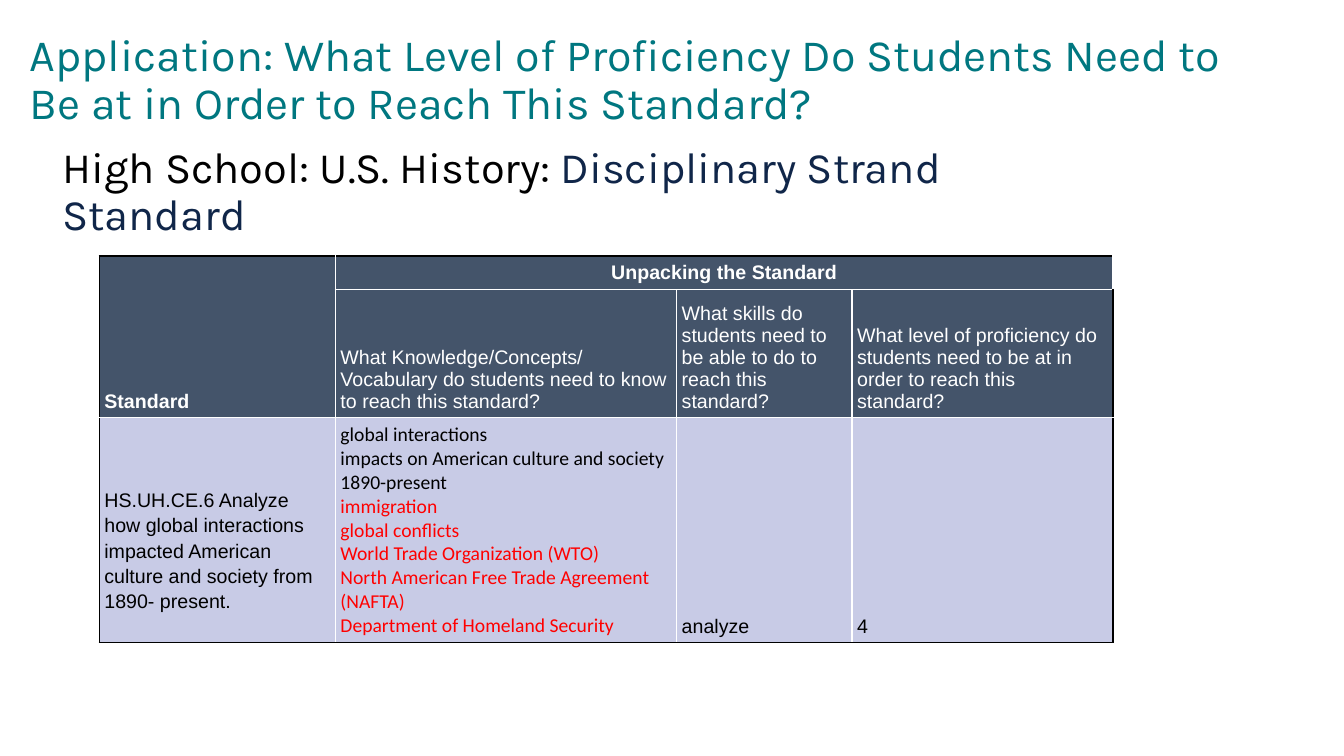
"""Build a slide that unpacks a U.S. History standard in a table."""
import pptx
import pptx.util
import pptx.dml.color
import pptx.enum.text
import pptx.oxml.ns
import lxml.etree

Cm = pptx.util.Cm
Pt = pptx.util.Pt
ALIGN = pptx.enum.text.PP_ALIGN
ANCHOR = pptx.enum.text.MSO_ANCHOR
HUES = {
    "teal": "007780", "navy": "102649", "black": "000000", "white": "FFFFFF",
    "slate": "44546A", "lilac": "C8CBE6", "red": "FF0000",
}


def tint(name):
    return pptx.dml.color.RGBColor.from_string(HUES[name])


def write(para, text, font="Arial", size=14, hue="black", bold=False,
          align=ALIGN.LEFT, lead=1.0):
    para.alignment = align
    para.line_spacing = lead
    run = para.add_run()
    run.text = text
    run.font.name = font
    run.font.size = Pt(size)
    run.font.bold = bold
    run.font.color.rgb = tint(hue)


class Board:
    def __init__(self, deck):
        self.slide = deck.slides.add_slide(deck.slide_layouts[6])
        self.font = "Karla"
        self.lead = 0.9
        self.inset = Cm(0.13)

    def label(self, place, parts, size):
        frame = self.slide.shapes.add_textbox(*map(Cm, place)).text_frame
        frame.word_wrap = True
        for text, hue in parts:
            write(frame.paragraphs[0], text, font=self.font, size=size,
                  hue=hue, lead=self.lead)

    def grid(self, left, top, widths, heights):
        frame = self.slide.shapes.add_table(
            len(heights), len(widths), Cm(left), Cm(top),
            Cm(sum(widths)), Cm(sum(heights)))
        table = frame.table
        table.first_row = table.horz_banding = False
        for col, width in zip(table.columns, widths):
            col.width = Cm(width)
        for row, height in zip(table.rows, heights):
            row.height = Cm(height)
        return table

    def border(self, cell, sides):
        props = cell._tc.get_or_add_tcPr()
        for side, hue in sides.items():
            line = lxml.etree.SubElement(
                props, pptx.oxml.ns.qn("a:ln" + side), w=str(Pt(1)))
            fill = lxml.etree.SubElement(line, pptx.oxml.ns.qn("a:solidFill"))
            lxml.etree.SubElement(
                fill, pptx.oxml.ns.qn("a:srgbClr"), val=HUES[hue])

    def paint(self, table):
        last_row, last_col = len(table.rows) - 1, len(table.columns) - 1
        for r in range(last_row + 1):
            for c in range(last_col + 1):
                cell = table.cell(r, c)
                edges = {"L": c == 0, "R": c == last_col,
                         "T": r == 0, "B": r == last_row}
                self.border(cell, {side: "black" if outer else "white"
                                   for side, outer in edges.items()})
                cell.fill.solid()
                cell.fill.fore_color.rgb = tint(
                    "lilac" if r == last_row else "slate")

    def entry(self, cell, lines, anchor=ANCHOR.BOTTOM, foot=None, **style):
        cell.vertical_anchor = anchor
        cell.margin_left = cell.margin_right = cell.margin_top = self.inset
        cell.margin_bottom = Cm(foot) if foot else self.inset
        frame = cell.text_frame
        for i, (text, hue) in enumerate(lines):
            para = frame.add_paragraph() if i else frame.paragraphs[0]
            write(para, text, hue=hue, **style)


def main():
    deck = pptx.Presentation()
    deck.slide_width, deck.slide_height = Cm(33.87), Cm(19.05)
    board = Board(deck)
    board.label((0.5, 0.7, 32.05, 3.66), [
        ("Application: What Level of Proficiency Do Students Need to "
         "Be at in Order to Reach This Standard?", "teal")], 32)
    board.label((1.32, 3.56, 25.53, 13), [
        ("High School: U.S. History: ", "black"),
        ("Disciplinary Strand Standard", "navy")], 31)

    table = board.grid(2.5, 6.45, (5.95, 8.6, 4.42, 6.58), (0.83, 3.03, 5.67))
    board.paint(table)
    table.cell(0, 0).merge(table.cell(1, 0))
    table.cell(0, 1).merge(table.cell(0, 3))
    board.entry(table.cell(0, 0), [("Standard", "white")], bold=True)
    board.entry(table.cell(0, 1), [("Unpacking the Standard", "white")],
                anchor=ANCHOR.MIDDLE, bold=True, align=ALIGN.CENTER)
    heads = (
        "What Knowledge/Concepts/ Vocabulary do students need to know "
        "to reach this standard?",
        "What skills do students need to be able to do to reach this standard?",
        "What level of proficiency do students need to be at in order "
        "to reach this standard?",
    )
    for col, head in enumerate(heads, 1):
        board.entry(table.cell(1, col), [(head, "white")])

    board.entry(table.cell(2, 0), [
        ("HS.UH.CE.6 Analyze how global interactions impacted American "
         "culture and society from 1890- present.", "black")],
        foot=0.75, lead=1.15)
    given = ("global interactions", "impacts on American culture and society",
             "1890-present")
    added = ("immigration", "global conflicts",
             "World Trade Organization (WTO)",
             "North American Free Trade Agreement (NAFTA)",
             "Department of Homeland Security")
    board.entry(table.cell(2, 1),
                [(text, "black") for text in given]
                + [(text, "red") for text in added], font="Calibri")
    for col, text in ((2, "analyze"), (3, "4")):
        board.entry(table.cell(2, col), [(text, "black")])
    deck.save("out.pptx")


if __name__ == "__main__":
    main()
